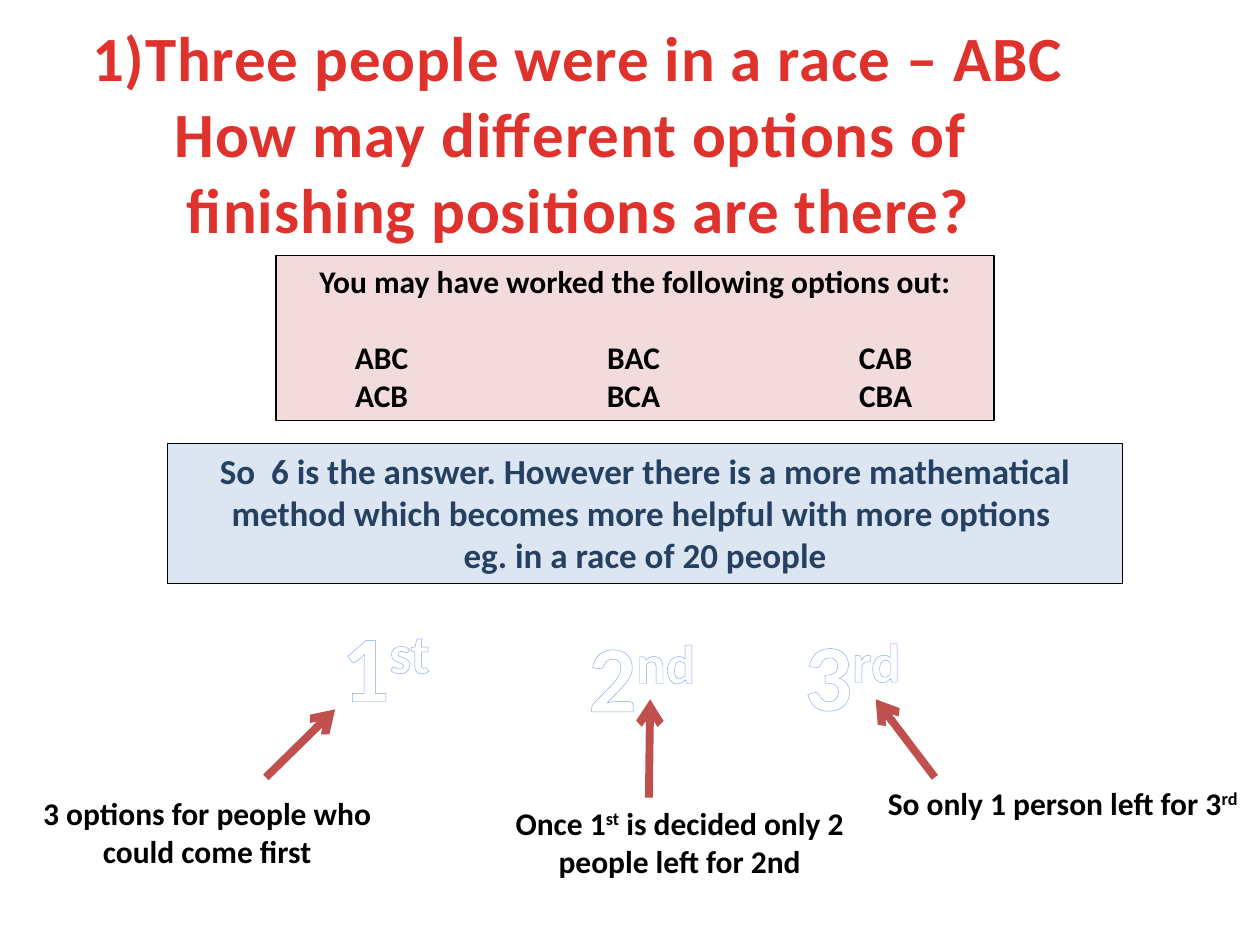
from dataclasses import dataclass

from lxml import etree
from pptx import Presentation
from pptx.dml.color import RGBColor as RGB
from pptx.enum.shapes import MSO_CONNECTOR as Connector, MSO_SHAPE as Shape
from pptx.enum.text import MSO_ANCHOR as Anchor, MSO_AUTO_SIZE as AutoSize, PP_ALIGN as Align
from pptx.oxml.ns import qn
from pptx.util import Inches, Pt


@dataclass(frozen=True)
class Theme:
    font: str = "Calibri"
    title: str = "E0322D"
    title_end: str = "A2201C"
    ink: str = "000000"
    navy: str = "254061"
    pink: str = "F2DCDB"
    pale_blue: str = "DCE6F2"
    arrow: str = "C0504D"
    place: str = "FFFFFF"
    place_edge: str = "7EA6EA"
    title_size: int = 36
    place_size: int = 54
    method_size: int = 20
    body_size: int = 18


THEME = Theme()


def write(p, text, size=THEME.body_size, color=THEME.ink, align=Align.CENTER,
          spacing=None, outline=None, gradient_to=None):
    """Fill a paragraph with bold text; parts between ^ marks are superscript."""
    p.alignment = align
    for i, part in enumerate(text.split("^")):
        if not part:
            continue
        r = p.add_run()
        r.text = part
        font = r.font
        font.name, font.size, font.bold = THEME.font, Pt(size), True
        if gradient_to:
            font.fill.gradient()
            font.fill.gradient_angle = 270
            stops = zip(font.fill.gradient_stops, (color, gradient_to), (0.25, 1))
            for stop, shade, position in stops:
                stop.color.rgb, stop.position = RGB.from_string(shade), position
        else:
            font.color.rgb = RGB.from_string(color)
        rPr = r._r.get_or_add_rPr()
        if i % 2:
            rPr.set("baseline", "30000")
        if spacing:
            rPr.set("spc", str(int(spacing * 100)))
        if outline:
            ln = etree.Element(qn("a:ln"), w=str(Pt(2.48)))
            fill = etree.SubElement(ln, qn("a:solidFill"))
            etree.SubElement(fill, qn("a:srgbClr"), val=outline)
            rPr.insert(0, ln)


def set_tabs(p, stops):
    """Give a paragraph centred tab stops, in inches."""
    tabs = etree.SubElement(p._p.get_or_add_pPr(), qn("a:tabLst"))
    for stop in stops:
        etree.SubElement(tabs, qn("a:tab"), pos=str(Inches(stop)), algn="ctr")


class SlideBuilder:
    def __init__(self, prs, theme):
        self.theme = theme
        self.slide = prs.slides.add_slide(prs.slide_layouts[5])

    def _fill(self, sp, lines, wrap=True, **fmt):
        tf = sp.text_frame
        tf.word_wrap, tf.auto_size = wrap, AutoSize.NONE
        tf.vertical_anchor = Anchor.TOP
        for i, line in enumerate(lines):
            write(tf.add_paragraph() if i else tf.paragraphs[0], line, **fmt)
        return tf

    def title(self, box, lines):
        sp = self.slide.shapes.title
        sp.left, sp.top, sp.width, sp.height = map(Inches, box)
        t = self.theme
        self._fill(sp, lines, wrap=False, size=t.title_size, color=t.title,
                   gradient_to=t.title_end, spacing=0.5)

    def text(self, box, line, **fmt):
        sp = self.slide.shapes.add_textbox(*map(Inches, box))
        self._fill(sp, [line], **fmt)

    def panel(self, box, fill, lines, **fmt):
        sp = self.slide.shapes.add_shape(Shape.RECTANGLE, *map(Inches, box))
        sp.shadow.inherit = False
        sp.fill.solid()
        sp.fill.fore_color.rgb = RGB.from_string(fill)
        sp.line.color.rgb = RGB.from_string(self.theme.ink)
        sp.line.width = Pt(0.75)
        return self._fill(sp, lines, **fmt)

    def arrow(self, start, end):
        line = self.slide.shapes.add_connector(
            Connector.STRAIGHT, *map(Inches, (*start, *end)))
        line.line.color.rgb = RGB.from_string(self.theme.arrow)
        line.line.width = Pt(4.5)
        etree.SubElement(line.line._get_or_add_ln(), qn("a:tailEnd"), type="arrow")
        etree.SubElement(line._element.spPr, qn("a:effectLst"))


def main():
    prs = Presentation()
    prs.slide_width, prs.slide_height = Inches(10), Inches(7.5)
    t = THEME
    s = SlideBuilder(prs, t)

    # Question
    s.title((0.59, 0.1, 8, 1.92), [
        "1)Three people were in a race – ABC",
        "How may different options of ",
        "finishing positions are there?",
    ])

    # Listed options, in three columns
    tf = s.panel((2.19, 2.03, 5.7, 1.31), t.pink,
                 ["You may have worked the following options out:"])
    for i, row in enumerate((("ABC", "BAC", "CAB"), ("ACB", "BCA", "CBA"))):
        p = tf.add_paragraph()
        p.space_before = Pt(0 if i else 22)
        set_tabs(p, (0.74, 2.74, 4.74))
        write(p, "\t" + "\t".join(row), align=Align.LEFT)

    # Answer and lead-in to the method
    s.panel((1.33, 3.52, 7.58, 1.11), t.pale_blue, [
        "So  6 is the answer. However there is a more mathematical "
        "method which becomes more helpful with more options ",
        "eg. in a race of 20 people",
    ], size=t.method_size, color=t.navy)

    # Finishing places: label, arrow and explanation for each
    places = (
        ("1^st^", (2.58, 4.77, 0.96, 1.01), (2.11, 6.17), (2.66, 5.63),
         "3 options for people who could come first", (0.08, 6.25)),
        ("2^nd^", (4.53, 4.85, 1.13, 1.01), (5.15, 6.33), (5.16, 5.55),
         "Once 1^st^ is decided only 2 people left for 2nd", (3.83, 6.33)),
        ("3^rd^", (6.25, 4.84, 1.03, 1.01), (7.42, 6.17), (6.95, 5.55),
         "So only 1 person left for 3^rd^", (6.87, 6.17)),
    )
    for place, box, start, end, reason, corner in places:
        s.text(box, place, wrap=False, size=t.place_size, color=t.place,
               outline=t.place_edge)
        s.arrow(start, end)
        s.text((*corner, 3.13, 0.71), reason)

    prs.save("out.pptx")


if __name__ == "__main__":
    main()
